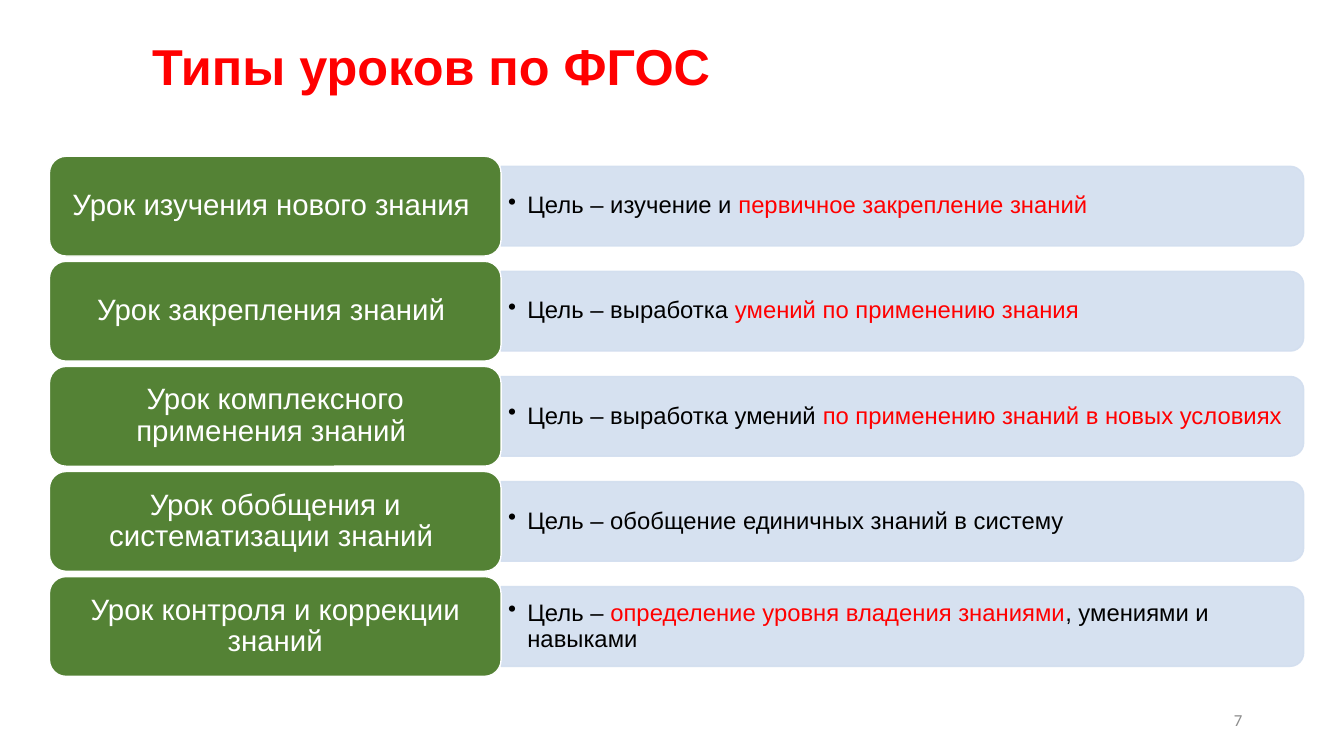
import pptx
import pptx.dml.color
import pptx.enum.shapes
import pptx.enum.text
import pptx.oxml
import pptx.oxml.ns
import pptx.util
from pptx.util import Inches

SHAPES = pptx.enum.shapes.MSO_SHAPE
ALIGN = pptx.enum.text.PP_ALIGN
RED, BLACK, WHITE, GREY = "FF0000", "000000", "FFFFFF", "8C8C8C"
GREEN, PALE_BLUE = "548235", "D2DEEF"


def color(hex_string):
    return pptx.dml.color.RGBColor.from_string(hex_string)


class LessonSlide:
    font = "Arial"

    def __init__(self, slide):
        self.slide = slide

    def set_runs(self, shape, runs, size, align=ALIGN.LEFT, insets=(0.1, 0.05),
                 font=None, bold=False):
        """Fill a shape with one paragraph of (text, colour) runs."""
        frame = shape.text_frame
        frame.word_wrap = True
        frame.vertical_anchor = pptx.enum.text.MSO_ANCHOR.MIDDLE
        frame.margin_left = frame.margin_right = Inches(insets[0])
        frame.margin_top = frame.margin_bottom = Inches(insets[1])
        paragraph = frame.paragraphs[0]
        paragraph.alignment = align
        paragraph.line_spacing = 0.9
        for text, run_color in runs:
            run = paragraph.add_run()
            run.text = text
            run.font.name = font or self.font
            run.font.size = pptx.util.Pt(size)
            run.font.bold = bold
            run.font.color.rgb = color(run_color)
        return paragraph

    def text(self, box, runs, size, **style):
        return self.set_runs(self.slide.shapes.add_textbox(*map(Inches, box)),
                             runs, size, **style)

    def panel(self, kind, box, fill, line):
        shape = self.slide.shapes.add_shape(kind, *map(Inches, box))
        shape.shadow.inherit = False
        shape.fill.solid()
        shape.fill.fore_color.rgb = color(fill)
        shape.line.color.rgb = color(line)
        shape.line.width = pptx.util.Pt(1)
        return shape

    def goal_bar(self, left, middle, length, thickness):
        """A bar rounded at its right end: an upright shape turned by 90°."""
        box = (left + (length - thickness) / 2, middle - length / 2, thickness, length)
        bar = self.panel(SHAPES.ROUND_2_SAME_RECTANGLE, box, PALE_BLUE, PALE_BLUE)
        bar.rotation = 90
        properties = bar.element.spPr
        for fill_color in properties.iter(pptx.oxml.ns.qn("a:srgbClr")):
            fill_color.append(pptx.oxml.parse_xml(
                '<a:alpha xmlns:a="http://schemas.openxmlformats.org/drawingml/2006/main"'
                ' val="90000"/>'))

    def goal_text(self, box, runs):
        paragraph = self.text(box, runs, 17, insets=(0.07, 0.04))
        paragraph.level = 1
        properties = paragraph._p.get_or_add_pPr()
        properties.set("marL", str(Inches(0.19)))
        properties.set("indent", str(-Inches(0.19)))
        properties.append(pptx.oxml.parse_xml(
            '<a:buChar xmlns:a="http://schemas.openxmlformats.org/drawingml/2006/main"'
            ' char="•"/>'))

    def lesson_type(self, box, name):
        block = self.panel(SHAPES.ROUNDED_RECTANGLE, box, GREEN, WHITE)
        self.set_runs(block, [(name, WHITE)], 21, align=ALIGN.CENTER, insets=(0.09, 0.04))


LESSONS = [
    ("Урок изучения нового знания ",
     [("Цель – изучение и ", BLACK), ("первичное закрепление знаний", RED)]),
    ("Урок закрепления знаний ",
     [("Цель – выработка ", BLACK), ("умений по применению знания", RED)]),
    ("Урок комплексного применения знаний ",
     [("Цель – выработка умений ", BLACK),
      ("по применению знаний в новых условиях", RED)]),
    ("Урок обобщения и систематизации знаний ",
     [("Цель – обобщение единичных знаний в систему", BLACK)]),
    ("Урок контроля и коррекции знаний",
     [("Цель – ", BLACK), ("определение уровня владения знаниями", RED),
      (", умениями и навыками", BLACK)]),
]
TYPE_LEFT, TYPE_WIDTH, TYPE_HEIGHT = 0.49, 4.48, 0.99
GOAL_LEFT = TYPE_LEFT + TYPE_WIDTH
FIRST_TOP, LAST_TOP = 1.55, 5.72
PITCH = (LAST_TOP - FIRST_TOP) / (len(LESSONS) - 1)


def main():
    presentation = pptx.Presentation()
    presentation.slide_width = Inches(13.33)
    presentation.slide_height = Inches(7.5)
    page = LessonSlide(presentation.slides.add_slide(presentation.slide_layouts[6]))

    # Title and page number
    page.text((1.41, 0.17, 11.01, 1.03), [("Типы уроков по ФГОС", RED)], 36, bold=True)
    page.text((9.42, 6.95, 3, 0.4), [("7", GREY)], 12, align=ALIGN.RIGHT, font="Calibri")

    # One row per lesson type: goal bar, goal, type block
    for row, (name, goal) in enumerate(LESSONS):
        top = FIRST_TOP + row * PITCH
        middle = top + TYPE_HEIGHT / 2
        page.goal_bar(GOAL_LEFT, middle, 7.96, 0.79)
        page.goal_text((GOAL_LEFT, middle - 0.36, 7.92, 0.72), goal)
        page.lesson_type((TYPE_LEFT, top, TYPE_WIDTH, TYPE_HEIGHT), name)

    presentation.save("out.pptx")


if __name__ == "__main__":
    main()
